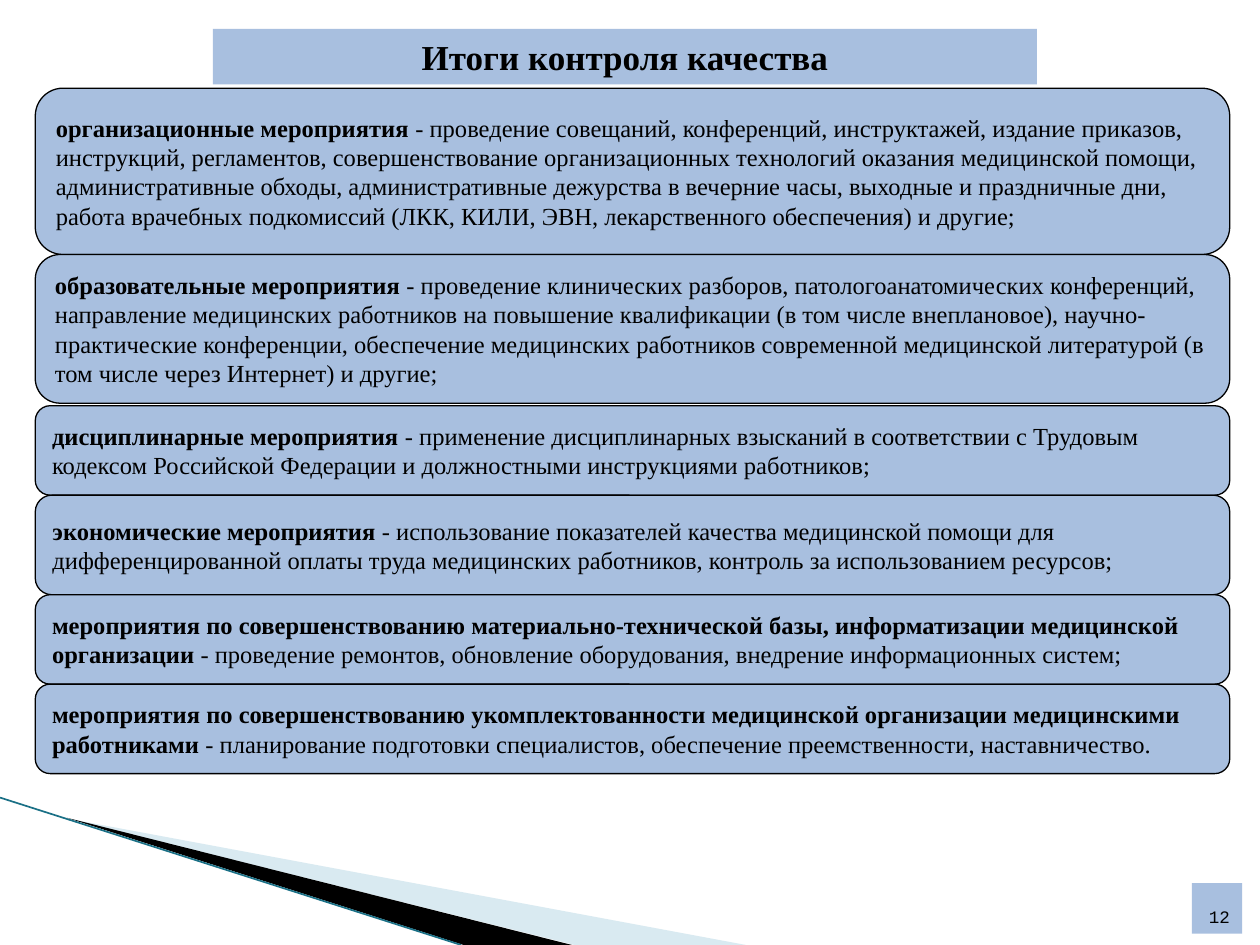
from lxml.etree import SubElement
from pptx import Presentation
from pptx.dml.color import RGBColor
from pptx.enum.shapes import MSO_CONNECTOR, MSO_SHAPE
from pptx.enum.text import MSO_ANCHOR as Anchor, PP_ALIGN as Align
from pptx.oxml.ns import qn
from pptx.util import Inches, Pt

COLOURS = {"panel": "A8BFDF", "ink": "000000", "wedge": "A0CBDC", "edge": "1A7086"}
SERIF = "Times New Roman"
MONO = "Courier New"
UNIT = Inches(0.1)
COLUMNS, ROWS = 100, 75
LEFT, WIDTH, FIRST_ROW = 2.8, 94.8, 7

MEASURES = [
    (13.2, 0, "организационные мероприятия ",
     "- проведение совещаний, конференций, инструктажей, издание приказов, инструкций, "
     "регламентов, совершенствование организационных технологий оказания медицинской помощи, "
     "административные обходы, административные дежурства в вечерние часы, выходные и "
     "праздничные дни, работа врачебных подкомиссий (ЛКК, КИЛИ, ЭВН, лекарственного "
     "обеспечения) и другие;"),
    (11.8, 0.2, "образовательные мероприятия ",
     "- проведение клинических разборов, патологоанатомических конференций, направление "
     "медицинских работников на повышение квалификации (в том числе внеплановое), "
     "научно-практические конференции, обеспечение медицинских работников современной "
     "медицинской литературой (в том числе через Интернет) и другие;"),
    (7.1, 0, "дисциплинарные мероприятия ",
     "- применение дисциплинарных взысканий в соответствии с Трудовым кодексом Российской "
     "Федерации и должностными инструкциями работников;"),
    (7.9, 0, "экономические мероприятия ",
     "- использование показателей качества медицинской помощи для дифференцированной оплаты "
     "труда медицинских работников, контроль за использованием ресурсов;"),
    (7.1, 0, "мероприятия по совершенствованию материально-технической базы, "
     "информатизации медицинской организации ",
     "- проведение ремонтов, обновление оборудования, внедрение информационных систем;"),
    (7.1, 0, "мероприятия по совершенствованию укомплектованности медицинской организации "
     "медицинскими работниками ",
     "- планирование подготовки специалистов, обеспечение преемственности, наставничество."),
]


def colour(name):
    return RGBColor.from_string(COLOURS[name])


def grid(*lengths):
    return [round(length * UNIT) for length in lengths]


class Page:
    def __init__(self, deck):
        self.slide = deck.slides.add_slide(deck.slide_layouts[6])
        self.shapes = self.slide.shapes

    def wedge(self, points, fill, opacity=100):
        builder = self.shapes.build_freeform(*grid(*points[0]))
        builder.add_line_segments([grid(*point) for point in points[1:]])
        wedge = builder.convert_to_shape()
        wedge.shadow.inherit = False
        wedge.fill.solid()
        wedge.fill.fore_color.rgb = colour(fill)
        wedge.line.fill.background()
        if opacity < 100:
            tint = wedge.fill._xPr.find(qn("a:solidFill"))[0]
            SubElement(tint, qn("a:alpha"), val=str(opacity * 1000))

    def edge(self, start, end):
        edge = self.shapes.add_connector(MSO_CONNECTOR.STRAIGHT, *grid(*start, *end))
        edge.line.color.rgb = colour("edge")
        edge.line.width = Pt(0.95)
        SubElement(edge._element.spPr, qn("a:effectLst"))

    def panel(self, place, runs, size, font=SERIF, align=Align.LEFT,
              anchor=Anchor.MIDDLE, rounded=False):
        preset = MSO_SHAPE.ROUNDED_RECTANGLE if rounded else MSO_SHAPE.RECTANGLE
        panel = self.shapes.add_shape(preset, *grid(*place))
        panel.shadow.inherit = False
        panel.fill.solid()
        panel.fill.fore_color.rgb = colour("panel")
        if rounded:
            panel.line.color.rgb = colour("ink")
            panel.line.width = Pt(0.75)
        else:
            panel.line.fill.background()
        frame = panel.text_frame
        frame.word_wrap = True
        frame.vertical_anchor = anchor
        paragraph = frame.paragraphs[0]
        paragraph.alignment = align
        for text, bold in runs:
            run = paragraph.add_run()
            run.text = text
            run.font.name = font
            run.font.size = Pt(size)
            run.font.bold = bold
            run.font.color.rgb = colour("ink")


def main():
    deck = Presentation()
    deck.slide_width, deck.slide_height = grid(COLUMNS, ROWS)
    page = Page(deck)

    page.wedge([(5.5, 65), (59.2, ROWS), (45.6, ROWS)], "wedge", opacity=40)
    page.wedge([(5.3, 64.9), (45.4, ROWS), (36.8, ROWS)], "ink")
    page.edge((0, 63.3), (36.6, ROWS))

    page.panel((16.9, 2.3, 65.4, 4.4), [("Итоги контроля качества", True)], 20,
               align=Align.CENTER)
    top = FIRST_ROW
    for height, gap, measure, details in MEASURES:
        page.panel((LEFT, top, WIDTH, height), [(measure, True), (details, False)], 14,
                   rounded=True)
        top += height + gap
    page.panel((94.6, 70.1, 4, 4), [("12", False)], 10, font=MONO, align=Align.RIGHT,
               anchor=Anchor.BOTTOM)

    deck.save("out.pptx")


if __name__ == "__main__":
    main()
